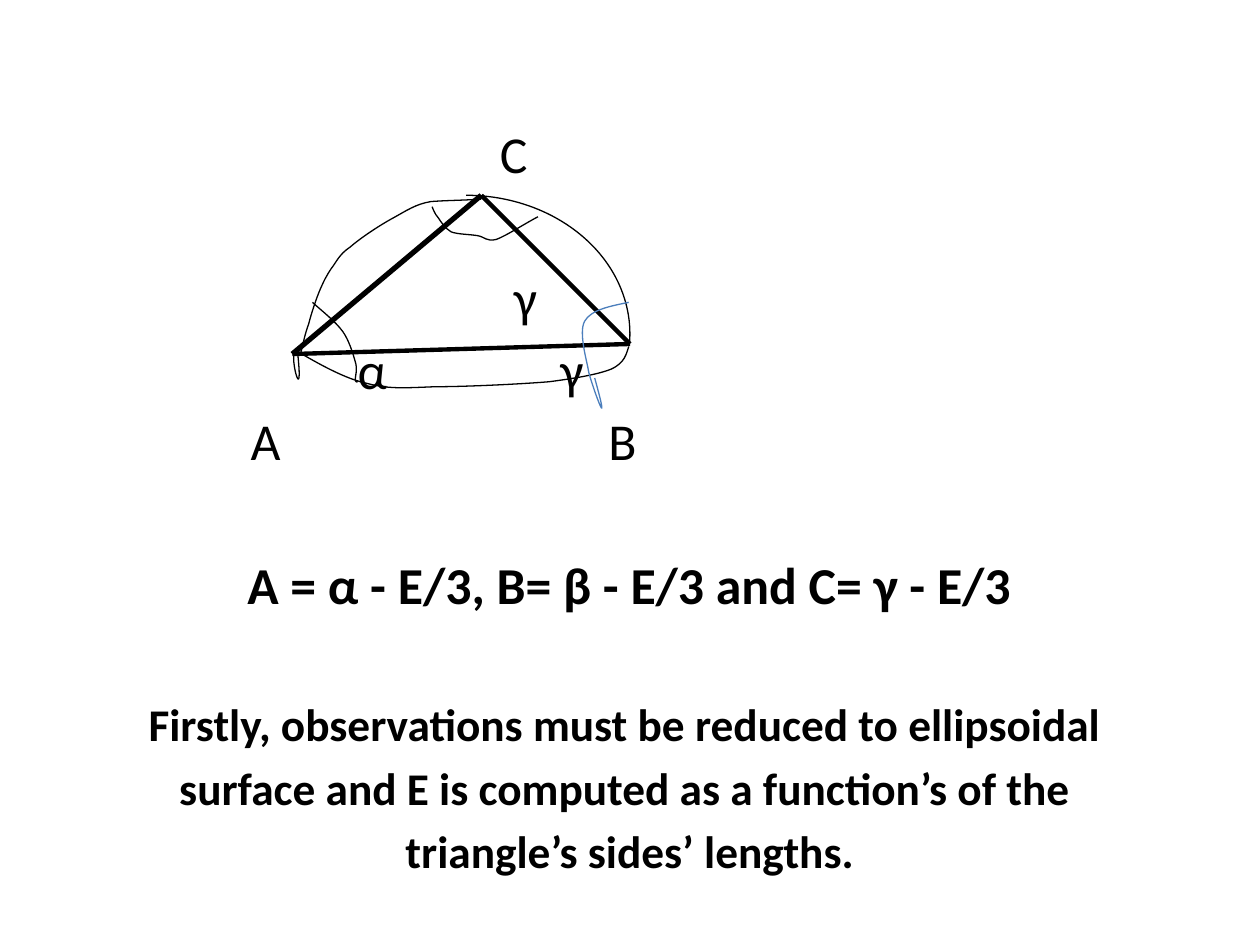
from pptx import Presentation
from pptx.dml.color import RGBColor
from pptx.enum.shapes import MSO_CONNECTOR as Conn, MSO_SHAPE as Kind
from pptx.enum.text import PP_ALIGN as Align
from pptx.oxml.ns import qn
from pptx.util import Inches, Pt
from lxml import etree

BLACK, BLUE = "000000", "4B7EBC"


def paint(color, hue):
    color.rgb = RGBColor.from_string(hue)


def write(para, text, size=29.6, bold=False, gap=5.3, tabs=()):
    run = para.add_run()
    run.text = text
    run.font.name = "Calibri"
    run.font.size = Pt(size)
    run.font.bold = bold
    paint(run.font.color, BLACK)
    para.alignment = Align.LEFT if tabs else Align.CENTER
    para.space_before = Pt(gap)
    if tabs:
        stops = etree.SubElement(para._p.get_or_add_pPr(), qn("a:tabLst"))
        for stop in tabs:
            etree.SubElement(stops, qn("a:tab"), pos=str(Inches(stop)),
                             algn="l")


def bend(shape):
    """Turn each three line segments of an outline into one cubic curve."""
    path = next(shape._element.iter(qn("a:path")))
    lines = path.findall(qn("a:lnTo"))
    for i in range(0, len(lines), 3):
        cubic = etree.Element(qn("a:cubicBezTo"))
        lines[i].addprevious(cubic)
        for line in lines[i:i + 3]:
            cubic.append(line[0])
            path.remove(line)


class Sketch:
    def __init__(self, slide):
        self.shapes = slide.shapes

    def stroke(self, line, width, hue=BLACK):
        paint(line.color, hue)
        line.width = Pt(width)

    def text(self, x, y, w, h, items):
        frame = self.shapes.add_textbox(*map(Inches, (x, y, w, h))).text_frame
        frame.word_wrap = True
        for i, (words, style) in enumerate(items):
            para = frame.add_paragraph() if i else frame.paragraphs[0]
            write(para, words, **style)

    def side(self, start, end, width):
        line = self.shapes.add_connector(
            Conn.STRAIGHT, *map(Inches, start + end))
        self.stroke(line.line, width)
        etree.SubElement(line._element.spPr, qn("a:effectLst"))

    def arc(self, x, y, w, h, turn):
        arc = self.shapes.add_shape(Kind.ARC, *map(Inches, (x, y, w, h)))
        arc.adjustments[0], arc.adjustments[1] = turn
        self.finish(arc)

    def curve(self, start, *points, hue=BLACK):
        """Draw cubic curves: two handles and an end for each."""
        pen = self.shapes.build_freeform(*map(Inches, start))
        pen.add_line_segments([(Inches(x), Inches(y)) for x, y in points],
                              close=False)
        shape = pen.convert_to_shape()
        bend(shape)
        self.finish(shape, hue)

    def finish(self, shape, hue=BLACK):
        shape.shadow.inherit = False
        shape.fill.background()
        self.stroke(shape.line, 0.75, hue)


def main():
    deck = Presentation()
    deck.slide_width, deck.slide_height = Inches(10), Inches(7.5)
    art = Sketch(deck.slides.add_slide(deck.slide_layouts[6]))

    wide = 46.8
    small = dict(size=25.9, bold=True, gap=5.2)
    art.text(0.5, 0.92, 9, 5.78, [
        ("\tC", dict(tabs=[3.37], gap=0)),
        ("\tγ", dict(tabs=[3.48], gap=wide)),
        ("\tα\tγ", dict(tabs=[2.24, 3.85])),
        ("\tA\tB", dict(tabs=[1.39, 4.23])),
        ("A = α - E/3, B= β - E/3 and C= γ - E/3", dict(bold=True, gap=wide)),
        ("Firstly, observations must be reduced to ellipsoidal ",
         dict(small, gap=46.5)),
        ("surface and E is computed as a function’s of the ", small),
        ("triangle’s sides’ lengths.", small)])

    a, b, c = (2.32, 2.81), (5, 2.73), (3.82, 1.55)
    art.side(a, c, 3)
    art.side(c, b, 2.5)
    art.side(b, a, 2.5)

    # Bulging sides of the ellipsoidal triangle
    art.arc(2.4, 1.55, 2.6, 2.2, (162, 1.584))
    art.curve((3.82, 1.58),
              (3.69, 1.59), (3.55, 1.59), (3.42, 1.6),
              (3.3, 1.62), (3.23, 1.67), (3.12, 1.73),
              (3.01, 1.79), (2.86, 1.89), (2.78, 1.96),
              (2.69, 2.02), (2.67, 2.08), (2.63, 2.13),
              (2.59, 2.19), (2.57, 2.23), (2.54, 2.3),
              (2.51, 2.37), (2.47, 2.49), (2.45, 2.57),
              (2.42, 2.65), (2.4, 2.75), (2.39, 2.79),
              (2.38, 2.83), (2.37, 2.79), (2.37, 2.79))
    art.curve((4.99, 2.75),
              (4.97, 2.81), (4.96, 2.88), (4.85, 2.93),
              (4.75, 2.97), (4.59, 3), (4.36, 3.03),
              (4.12, 3.05), (3.69, 3.07), (3.45, 3.07),
              (3.2, 3.08), (3.08, 3.09), (2.9, 3.04),
              (2.71, 3), (2.45, 2.84), (2.36, 2.79),
              (2.27, 2.75), (2.42, 3.31), (2.36, 2.78))

    # Angle marks at A, C and B
    art.curve((2.48, 2.4),
              (2.57, 2.48), (2.66, 2.55), (2.72, 2.63),
              (2.77, 2.7), (2.8, 2.8), (2.82, 2.87),
              (2.84, 2.93), (2.82, 2.99), (2.82, 3.01),
              (2.82, 3.04), (2.84, 3.03), (2.84, 3.03))
    art.curve((4.27, 1.72),
              (4.14, 1.79), (4.02, 1.87), (3.94, 1.9),
              (3.86, 1.92), (3.85, 1.88), (3.79, 1.87),
              (3.73, 1.86), (3.63, 1.86), (3.58, 1.84),
              (3.53, 1.81), (3.5, 1.76), (3.48, 1.73),
              (3.45, 1.7), (3.43, 1.64), (3.43, 1.64))
    art.curve((4.99, 2.4),
              (4.84, 2.43), (4.69, 2.46), (4.64, 2.55),
              (4.59, 2.64), (4.66, 2.87), (4.67, 2.94),
              (4.68, 3.01), (4.87, 3.54), (4.72, 3), hue=BLUE)

    deck.save("out.pptx")


if __name__ == "__main__":
    main()
